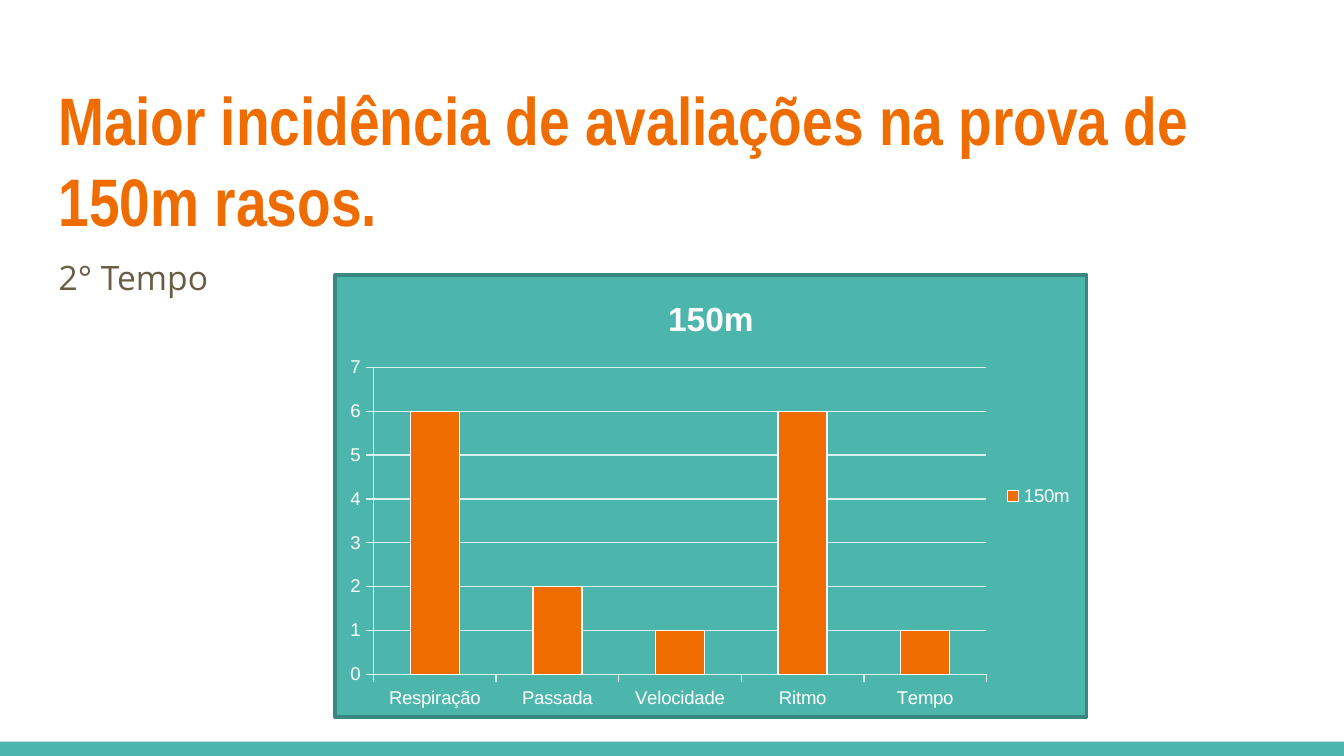
from dataclasses import dataclass

from lxml import etree
from pptx import Presentation
from pptx import util as u
from pptx.chart.data import CategoryChartData
from pptx.dml.color import RGBColor
from pptx.enum import chart as charts, shapes, text
from pptx.oxml import parse_xml
from pptx.oxml.ns import nsdecls, qn


@dataclass(frozen=True)
class Theme:
    teal: str = "4DB6AC"
    dark_teal: str = "39877F"
    orange: str = "EF6C00"
    brown: str = "695D46"
    white: str = "FFFFFF"
    grid: str = "DBF0EE"
    title_size: int = 36
    body_size: int = 18
    label_size: int = 10


def apply(target, values):
    for name, value in values.items():
        setattr(target, name, value)


class SlideBuilder:
    def __init__(self, presentation, theme):
        self.theme = theme
        self.slide = presentation.slides.add_slide(presentation.slide_layouts[6])

    def font(self, font, name, size, color, bold=False):
        apply(font, {"name": name, "size": u.Pt(size), "bold": bold})
        font.color.rgb = RGBColor.from_string(color)

    def line(self, line, color, width=0.75):
        line.color.rgb = RGBColor.from_string(color)
        line.width = u.Pt(width)

    def bar(self, box, color):
        shape = self.slide.shapes.add_shape(shapes.MSO_SHAPE.RECTANGLE, *map(u.Cm, box))
        shape.shadow.inherit = False
        shape.fill.solid()
        shape.fill.fore_color.rgb = RGBColor.from_string(color)
        shape.line.fill.background()

    def text(self, box, content, font, spacing):
        frame = self.slide.shapes.add_textbox(*map(u.Cm, box)).text_frame
        inset = u.Cm(0.25)
        apply(frame, {
            "word_wrap": True,
            "vertical_anchor": text.MSO_ANCHOR.TOP,
            "margin_left": inset,
            "margin_right": inset,
            "margin_top": inset,
            "margin_bottom": inset,
        })
        paragraph = frame.paragraphs[0]
        apply(paragraph, spacing)
        run = paragraph.add_run()
        run.text = content
        self.font(run.font, *font)

    def column_chart(self, box, name, values):
        theme = self.theme
        data = CategoryChartData(number_format="General")
        data.categories = list(values)
        data.add_series(name, list(values.values()))
        chart = self.slide.shapes.add_chart(
            charts.XL_CHART_TYPE.COLUMN_CLUSTERED, *map(u.Cm, box), data
        ).chart
        self.font(chart.font, "Arial", theme.label_size, theme.white)

        chart.has_title = True
        chart.chart_title.include_in_layout = False
        run = chart.chart_title.text_frame.paragraphs[0].add_run()
        run.text = name
        self.font(run.font, "Arial", theme.body_size, theme.white, True)

        chart.has_legend = True
        apply(chart.legend, {
            "position": charts.XL_LEGEND_POSITION.RIGHT,
            "include_in_layout": False,
        })

        for axis in (chart.category_axis, chart.value_axis):
            axis.major_tick_mark = charts.XL_TICK_MARK.OUTSIDE
            self.line(axis.format.line, theme.grid)
        apply(chart.value_axis, {
            "minimum_scale": 0,
            "maximum_scale": 7,
            "major_unit": 1,
            "has_major_gridlines": True,
        })
        self.line(chart.value_axis.major_gridlines.format.line, theme.grid)

        plot = chart.plots[0]
        apply(plot, {"gap_width": 150, "vary_by_categories": False})
        series = plot.series[0]
        series.format.fill.solid()
        series.format.fill.fore_color.rgb = RGBColor.from_string(theme.orange)
        self.line(series.format.line, theme.white)
        self.chart_area(chart, theme.teal, theme.dark_teal, 2)

    def chart_area(self, chart, fill, border, width):
        area = parse_xml(f"<c:spPr {nsdecls('c', 'a')}/>")
        for parent, color in (
            (area, fill),
            (etree.SubElement(area, qn("a:ln"), w=str(u.Pt(width))), border),
        ):
            solid = etree.Element(qn("a:solidFill"))
            etree.SubElement(solid, qn("a:srgbClr"), val=color)
            parent.insert(0, solid)
        chart.element.find(qn("c:chart")).addnext(area)


def main():
    theme = Theme()
    presentation = Presentation()
    apply(presentation, {"slide_width": u.Cm(25.4), "slide_height": u.Cm(14.29)})

    builder = SlideBuilder(presentation, theme)
    builder.bar((0, 14.02, 25.4, 0.27), theme.teal)
    builder.text(
        (0.86, 1.24, 23.67, 1.96),
        "Maior incidência de avaliações na prova de 150m rasos.",
        ("Arial Narrow", theme.title_size, theme.orange, True),
        {"line_spacing": 1.0},
    )
    builder.text(
        (0.86, 4.5, 6.68, 7.19),
        "2° Tempo",
        ("Open Sans", theme.body_size, theme.brown),
        {"line_spacing": 1.15, "space_after": u.Pt(16)},
    )
    builder.column_chart(
        (6.3, 5.16, 14.27, 8.43),
        "150m",
        {"Respiração": 6, "Passada": 2, "Velocidade": 1, "Ritmo": 6, "Tempo": 1},
    )
    presentation.save("out.pptx")


if __name__ == "__main__":
    main()
